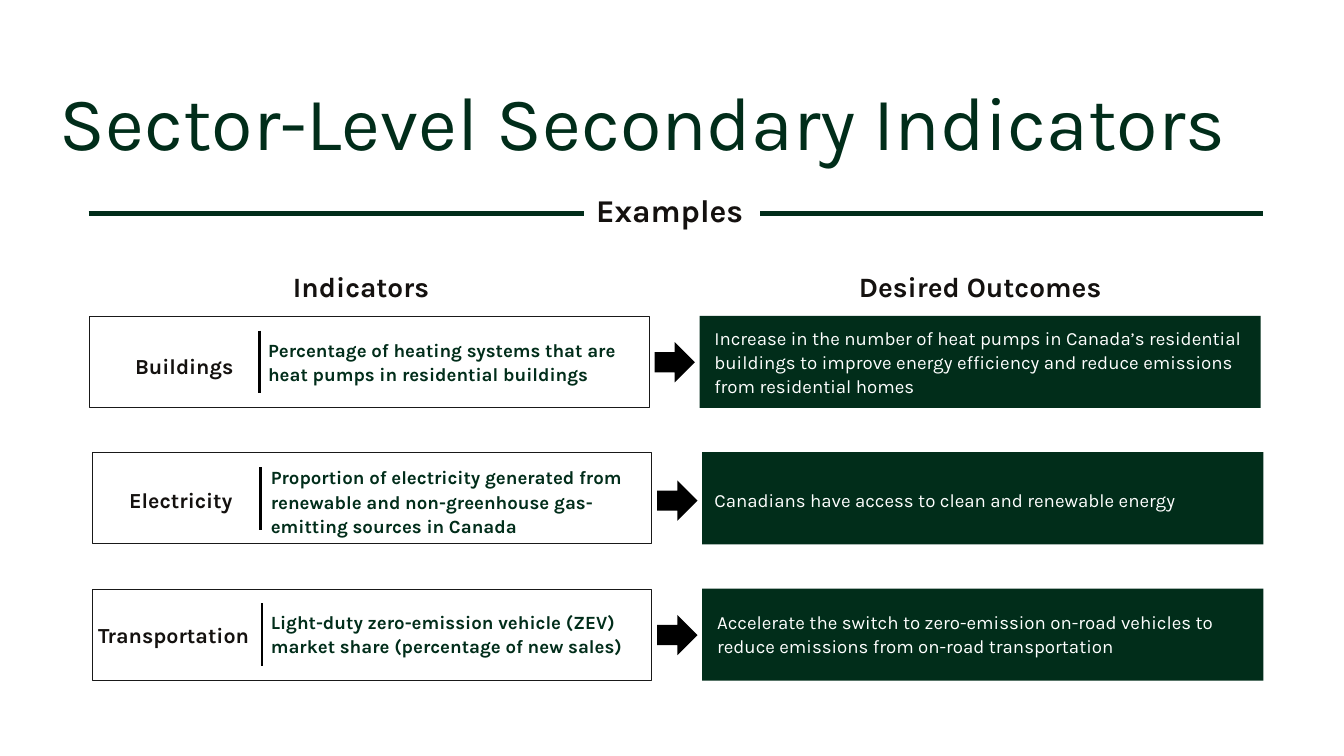
from dataclasses import dataclass

from lxml import etree
from pptx import Presentation
from pptx import util as u
from pptx.dml import color
from pptx.enum import shapes, text
from pptx.oxml import ns

COLORS = {"green": "012D1A", "ink": "14110F", "frame": "191919",
          "black": "000000", "white": "FFFFFF"}
FONT = "Karla"
COLUMNS = 20
PITCH = 2.03
BOX_W, BOX_H = 8.35, 1.37
ARROW = 0.6


@dataclass
class Style:
    size: float
    leading: float
    color: str
    bold: bool = True


@dataclass
class Row:
    left: float
    label: str
    label_at: tuple[float, float]
    label_w: float
    indicator: str
    indicator_top: float
    outcome: str
    outcome_at: tuple[float, float]
    arrow_top: float


TITLE = Style(81, 97.2, "green", False)
SECTION = Style(34, 37.4, "ink")
HEADING = Style(30, 33, "ink")
LABEL = Style(23, 29.9, "ink")
INDICATOR = Style(20, 26, "green")
OUTCOME = Style(20, 26, "white", False)

ROWS = [
    Row(1.32, "Buildings", (2.01, 5.22), 1.49,
        "Percentage of heating systems that are heat pumps in residential buildings", 5.01,
        "Increase in the number of heat pumps in Canada’s residential buildings "
        "to improve energy efficiency and reduce emissions from residential homes",
        (10.63, 4.83), 5.09),
    Row(1.36, "Electricity", (1.92, 7.22), 1.61,
        "Proportion of electricity generated from renewable and "
        "non-greenhouse gas-emitting sources in Canada", 6.91,
        "Canadians have access to clean and renewable energy", (10.63, 7.24), 7.15),
    Row(1.36, "Transportation", (1.46, 9.23), 2.31,
        "Light-duty zero-emission vehicle (ZEV) market share (percentage of new sales)", 9.06,
        "Accelerate the switch to zero-emission on-road vehicles "
        "to reduce emissions from on-road transportation", (10.67, 9.06), 9.15),
]

prs = Presentation()
prs.slide_width, prs.slide_height = u.Inches(20), u.Inches(11.25)
s = prs.slides.add_slide(prs.slide_layouts[5])


def grid(*cells: float) -> list[int]:
    return [round(c * prs.slide_width / COLUMNS) for c in cells]


def rgb(name: str) -> color.RGBColor:
    return color.RGBColor.from_string(COLORS[name])


def write(sp, words: str, style: Style) -> None:
    tf = sp.text_frame
    tf.word_wrap = True
    tf.auto_size = text.MSO_AUTO_SIZE.NONE
    tf.vertical_anchor = text.MSO_ANCHOR.TOP
    tf.margin_left = tf.margin_right = tf.margin_top = tf.margin_bottom = 0
    p = tf.paragraphs[0]
    p.alignment = text.PP_ALIGN.LEFT
    p.line_spacing = u.Pt(style.leading)
    r = p.add_run()
    r.text = words
    r.font.name, r.font.size, r.font.bold = FONT, u.Pt(style.size), style.bold
    r.font.color.rgb = rgb(style.color)


def add_text(left: float, top: float, width: float, words: str,
             style: Style, lines: int = 1) -> None:
    height = lines * style.leading / 72
    write(s.shapes.add_textbox(*grid(left, top, width, height)), words, style)


def add_line(x1: float, y1: float, x2: float, y2: float, name: str, width: float) -> None:
    c = s.shapes.add_connector(shapes.MSO_CONNECTOR.STRAIGHT, *grid(x1, y1, x2, y2))
    c.line.color.rgb, c.line.width = rgb(name), u.Pt(width)
    etree.SubElement(c._element.spPr, ns.qn("a:effectLst"))


def add_shape(kind: shapes.MSO_SHAPE, left: float, top: float, width: float, height: float,
              fill: str | None = None, line: str | None = None) -> None:
    sp = s.shapes.add_shape(kind, *grid(left, top, width, height))
    sp.shadow.inherit = False
    if fill:
        sp.fill.solid()
        sp.fill.fore_color.rgb = rgb(fill)
    else:
        sp.fill.background()
    if line:
        sp.line.color.rgb, sp.line.width = rgb(line), u.Pt(1)
    else:
        sp.line.fill.background()


def add_row(i: int, row: Row) -> None:
    top = 4.7 + i * PITCH
    rect = shapes.MSO_SHAPE.RECTANGLE
    add_shape(rect, row.left + 0.01, top + 0.01, BOX_W - 0.02, BOX_H - 0.02, line="frame")
    add_shape(rect, row.left + 9.09, top, BOX_W, BOX_H, fill="green")
    divider = 3.86 + 0.02 * i
    add_line(divider, top + 0.22, divider, top + 1.15, "black", 3)
    add_shape(shapes.MSO_SHAPE.RIGHT_ARROW, row.left + 8.42, row.arrow_top,
              ARROW, ARROW, fill="black")
    add_text(*row.label_at, row.label_w, row.label, LABEL)
    add_text(row.left + 2.67, row.indicator_top, 5.53, row.indicator, INDICATOR, 3 if i == 1 else 2)
    add_text(*row.outcome_at, 7.91, row.outcome, OUTCOME, 3 - i if i < 1 else i)


title = s.shapes.title
title.left, title.top, title.width, title.height = grid(0.89, 1.11, 18.21, 1.35)
write(title, "Sector-Level Secondary Indicators", TITLE)

for start, end in [(1.32, 8.69), (11.31, 18.8)]:
    add_line(start, 3.18, end, 3.18, "green", 5.25)
add_text(8.87, 2.89, 2.27, "Examples", SECTION)
add_text(4.36, 4.06, 2.27, "Indicators", HEADING)
add_text(12.78, 4.06, 3.69, "Desired Outcomes", HEADING)

for i, row in enumerate(ROWS):
    add_row(i, row)

prs.save("out.pptx")
